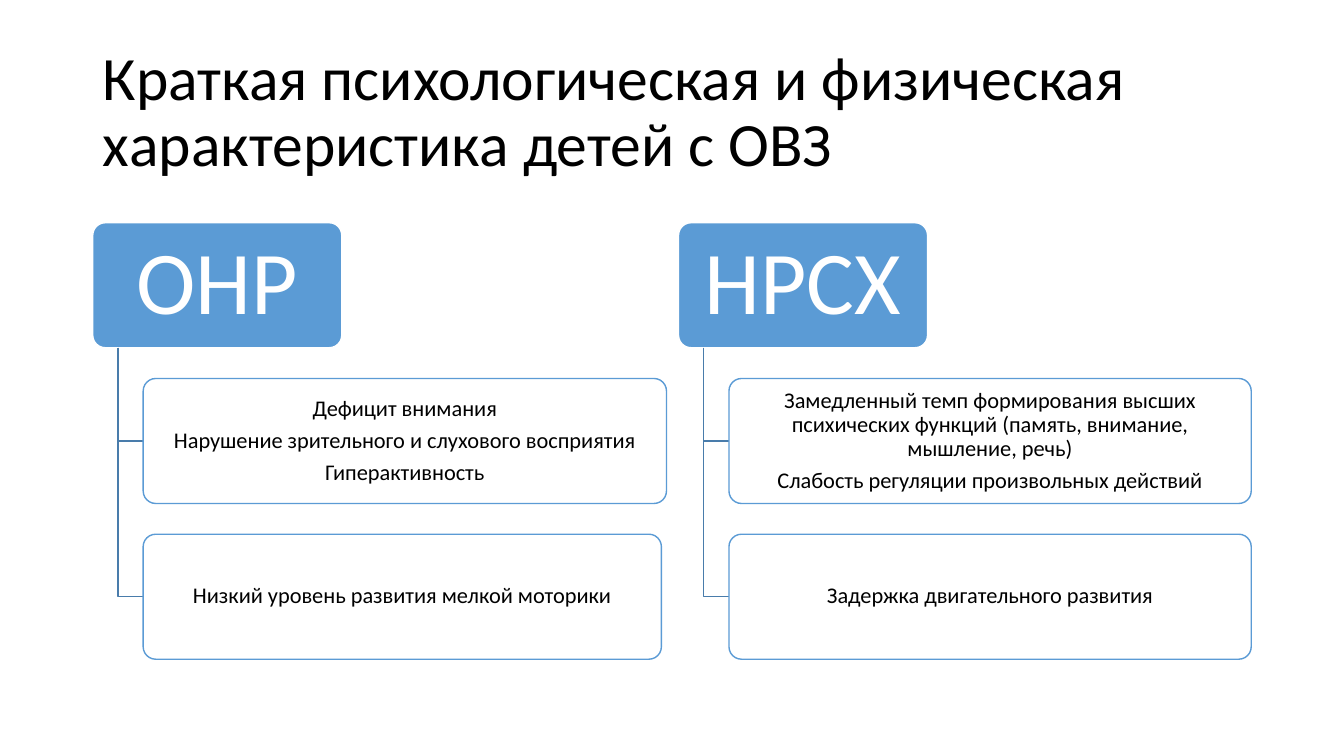
from pptx import Presentation
from pptx.dml.color import RGBColor
from pptx.enum.shapes import MSO_SHAPE
from pptx.enum.text import MSO_ANCHOR, PP_ALIGN
from pptx.util import Inches, Pt

ROUND = MSO_SHAPE.ROUNDED_RECTANGLE
MIDDLE = MSO_ANCHOR.MIDDLE
LEFT, CENTER = PP_ALIGN.LEFT, PP_ALIGN.CENTER

BLACK = RGBColor(0x00, 0x00, 0x00)
WHITE = RGBColor(0xFF, 0xFF, 0xFF)
BLUE = RGBColor(0x5B, 0x9B, 0xD5)
STEEL = RGBColor(0x49, 0x7C, 0xAB)

HEAD_W, BOX_H = 2.47, 1.24
STEP = 1.545     # from the top of one box to the next
INDENT = 0.25    # from head to branch line, and from line to box

TITLE = "Краткая психологическая и физическая характеристика детей с ОВЗ"
GROUPS = [
    (0.92, "ОНР", [
        (5.19, ["Дефицит внимания",
                "Нарушение зрительного и слухового восприятия",
                "Гиперактивность"]),
        (5.14, ["Низкий уровень развития мелкой моторики"]),
    ]),
    (6.73, "НРСХ", [
        (5.18, ["Замедленный темп формирования высших психических функций "
                "(память, внимание, мышление, речь)",
                "Слабость регуляции произвольных действий"]),
        (5.18, ["Задержка двигательного развития"]),
    ]),
]


def write(shape, lines, size=16, color=BLACK, align=CENTER, pad=(0.03, 0.02)):
    frame = shape.text_frame
    frame.word_wrap = True
    frame.vertical_anchor = MIDDLE
    frame.margin_left = frame.margin_right = Inches(pad[0])
    frame.margin_top = frame.margin_bottom = Inches(pad[1])
    for i, line in enumerate(lines):
        para = frame.add_paragraph() if i else frame.paragraphs[0]
        para.text = line
        para.alignment = align
        para.line_spacing = 0.9
        if i:
            para.space_before = Pt(0.35 * size)
        para.font.name = "Calibri"
        para.font.size = Pt(size)
        para.font.color.rgb = color


def add_box(slide, x, y, w, fill, line):
    box = slide.shapes.add_shape(
        ROUND, Inches(x), Inches(y), Inches(w), Inches(BOX_H))
    box.adjustments[0] = 0.1
    box.shadow.inherit = False
    box.fill.solid()
    box.fill.fore_color.rgb = fill
    box.line.color.rgb = line
    box.line.width = Pt(1)
    return box


def add_branch(slide, x, top, end):
    pen = slide.shapes.build_freeform(Inches(x), Inches(top))
    pen.add_line_segments(
        [(Inches(x), Inches(end)), (Inches(x + INDENT), Inches(end))],
        close=False)
    branch = pen.convert_to_shape()
    branch.shadow.inherit = False
    branch.fill.background()
    branch.line.color.rgb = STEEL
    branch.line.width = Pt(1)


def add_title(slide, x, y, w, h):
    title = slide.shapes.add_textbox(
        Inches(x), Inches(y), Inches(w), Inches(h))
    write(title, [TITLE], size=44, align=LEFT, pad=(0.1, 0.05))


def add_group(slide, x, y, name, items):
    # Head of the group
    head = add_box(slide, x, y, HEAD_W, BLUE, WHITE)
    write(head, [name], size=64, color=WHITE, pad=(0.13, 0.09))
    # Boxes below it, each on its branch line
    for i, (width, lines) in enumerate(items, 1):
        top = y + i * STEP
        add_branch(slide, x + INDENT, y + BOX_H, top + BOX_H / 2)
        box = add_box(slide, x + 2 * INDENT, top, width, WHITE, BLUE)
        write(box, lines)


def main():
    deck = Presentation()
    deck.slide_width, deck.slide_height = Inches(13.33), Inches(7.5)
    slide = deck.slides.add_slide(deck.slide_layouts[6])
    add_title(slide, 0.92, 0.4, 11.5, 1.45)
    for x, name, items in GROUPS:
        add_group(slide, x, 2.21, name, items)
    deck.save("out.pptx")


if __name__ == "__main__":
    main()
